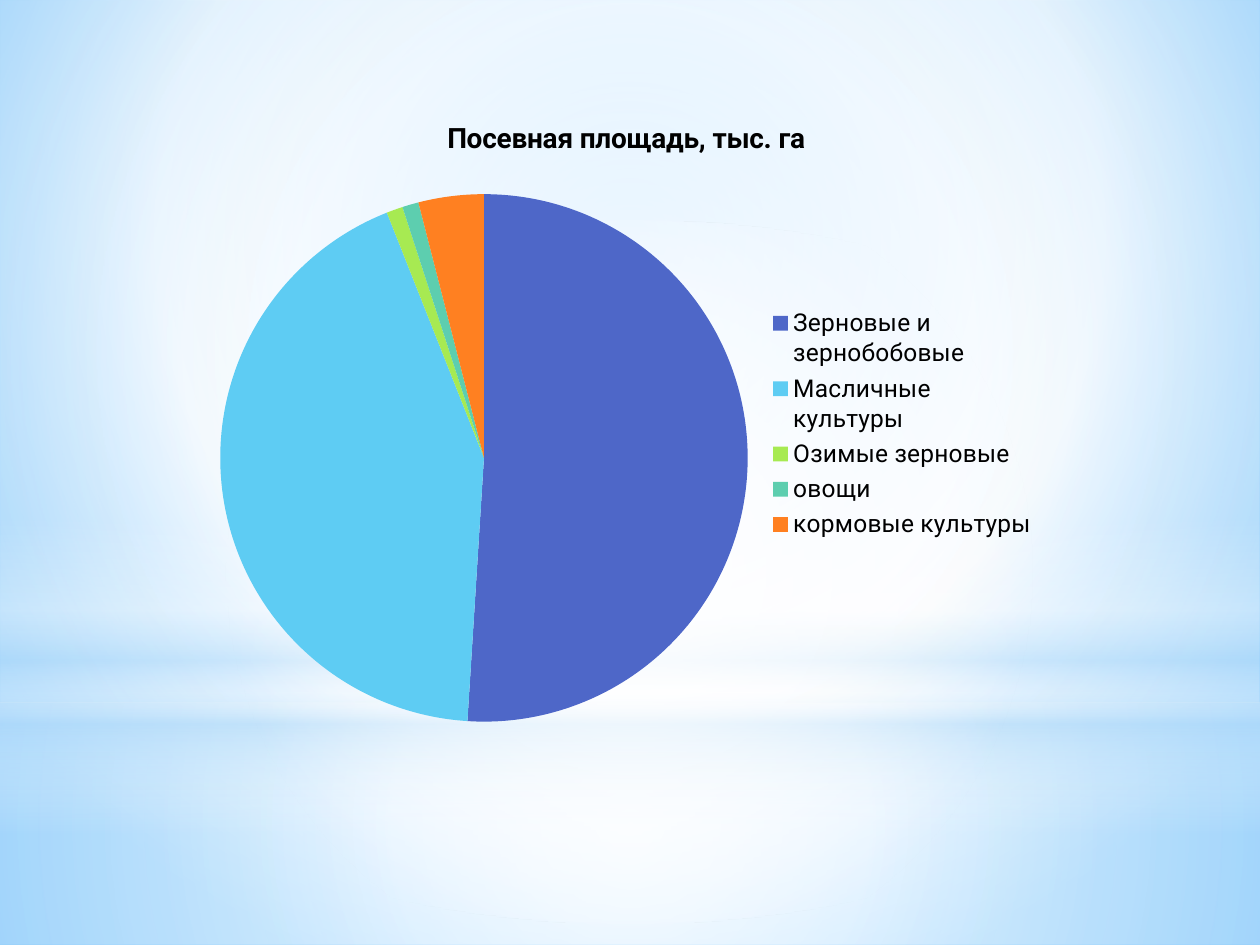
from lxml import etree
from pptx import Presentation
from pptx.chart import data as chart_data
from pptx.dml.color import RGBColor
from pptx.enum import chart as chart_enum, shapes
from pptx.oxml import ns
from pptx.util import Cm, Pt

COLORS = {
    "white": "FFFFFF", "haze": "B4DCFA", "sky": "9ED5FF", "azure": "5BB9FF",
    "ink": "000000", "indigo": "4E67C8", "cyan": "5ECCF3", "lime": "A7EA52",
    "mint": "5DCEAF", "orange": "FF8021",
}
WIDTH, HEIGHT, HORIZON = 25.4, 19.05, 14.17
CENTER = (50, 50, 50, 50)
CROPS = [
    ("Зерновые и зернобобовые", 51, "indigo"),
    ("Масличные культуры", 43, "cyan"),
    ("Озимые зерновые", 1, "lime"),
    ("овощи", 1, "mint"),
    ("кормовые культуры", 4, "orange"),
]


def rgb(name):
    """Return the palette colour with this name."""
    return RGBColor.from_string(COLORS[name])


def set_gradient(properties, stops, focus=None):
    """Swap the solid fill for a radial gradient, or a vertical one without focus."""
    gradient = etree.Element(ns.qn("a:gradFill"), rotWithShape="1")
    stop_list = etree.SubElement(gradient, ns.qn("a:gsLst"))
    for position, color, opacity in stops:
        stop = etree.SubElement(stop_list, ns.qn("a:gs"), pos=str(position * 1000))
        shade = etree.SubElement(stop, ns.qn("a:srgbClr"), val=COLORS[color])
        if opacity < 100:
            etree.SubElement(shade, ns.qn("a:alpha"), val=str(opacity * 1000))
    if focus:
        radial = etree.SubElement(gradient, ns.qn("a:path"), path="circle")
        edges = {side: str(inset * 1000) for side, inset in zip("ltrb", focus)}
        etree.SubElement(radial, ns.qn("a:fillToRect"), **edges)
    else:
        etree.SubElement(gradient, ns.qn("a:lin"), ang="5400000", scaled="0")
    properties.replace(properties.find(ns.qn("a:solidFill")), gradient)


def add_glow(slide, preset, box, stops, focus=None):
    """Add one translucent gradient layer in the given box."""
    glow = slide.shapes.add_shape(preset, *map(Cm, box))
    glow.shadow.inherit = False
    glow.line.fill.background()
    glow.fill.solid()
    set_gradient(glow.element.spPr, stops, focus)


def add_backdrop(slide, left, top, width, height):
    """Paint the sky, ground, horizon and central light."""
    slide.background.fill.solid()
    set_gradient(slide.element.xpath(".//p:bgPr")[0],
                 [(0, "sky", 100), (60, "white", 100), (100, "azure", 100)],
                 (20, 10, 20, 60))
    rectangle = shapes.MSO_SHAPE.RECTANGLE
    add_glow(slide, rectangle, (left, top + HORIZON, width, height - HORIZON),
             [(0, "white", 91), (37, "white", 76), (100, "haze", 79)], CENTER)
    add_glow(slide, rectangle, (left, top, width, HORIZON),
             [(0, "white", 89), (48, "white", 62), (100, "haze", 79)], CENTER)
    add_glow(slide, rectangle, (left, top + 10.46, width, 6.35),
             [(0, "white", 0), (29, "white", 30), (45, "haze", 40),
              (55, "white", 26), (65, "haze", 60), (100, "white", 0)])
    add_glow(slide, shapes.MSO_SHAPE.OVAL, (left, top + 4.45, width, HORIZON),
             [(0, "white", 100), (56, "white", 0)], CENTER)


def format_font(font, size, name="Roboto", color="ink", bold=False):
    """Apply typeface, size, colour and weight to a font."""
    font.name, font.size, font.bold = name, Pt(size), bold
    font.color.rgb = rgb(color)


def write_text(frame, text, **style):
    """Write formatted text into a text frame."""
    run = frame.paragraphs[0].add_run()
    run.text = text
    format_font(run.font, **style)


def add_crop_chart(slide, left, top, width, height):
    """Add the pie of sown areas with its title and legend."""
    areas = chart_data.CategoryChartData()
    areas.categories = [crop for crop, _, _ in CROPS]
    areas.add_series("Series 1", [area for _, area, _ in CROPS])
    pie = slide.shapes.add_chart(
        chart_enum.XL_CHART_TYPE.PIE, *map(Cm, (left, top, width, height)), areas).chart
    format_font(pie.font, 18, name="Cabin")
    pie.has_title = True
    write_text(pie.chart_title.text_frame, "Посевная площадь, тыс. га", size=16, bold=True)
    pie.chart_title.include_in_layout = False
    pie.has_legend = True
    pie.legend.position = chart_enum.XL_LEGEND_POSITION.RIGHT
    pie.legend.include_in_layout = False
    format_font(pie.legend.font, 14)
    plot = pie.plots[0]
    plot.vary_by_categories = True
    for index, (_, _, color) in enumerate(CROPS):
        sector = plot.series[0].points[index].format
        sector.fill.solid()
        sector.fill.fore_color.rgb = rgb(color)
        sector.line.fill.background()


def main():
    """Build and save the slide."""
    deck = Presentation()
    deck.slide_width, deck.slide_height = Cm(WIDTH), Cm(HEIGHT)
    slide = deck.slides.add_slide(deck.slide_layouts[6])
    add_backdrop(slide, 0, 0, WIDTH, HEIGHT)
    add_crop_chart(slide, 4.09, 1.93, 17.07, 13.23)
    deck.save("out.pptx")


if __name__ == "__main__":
    main()
